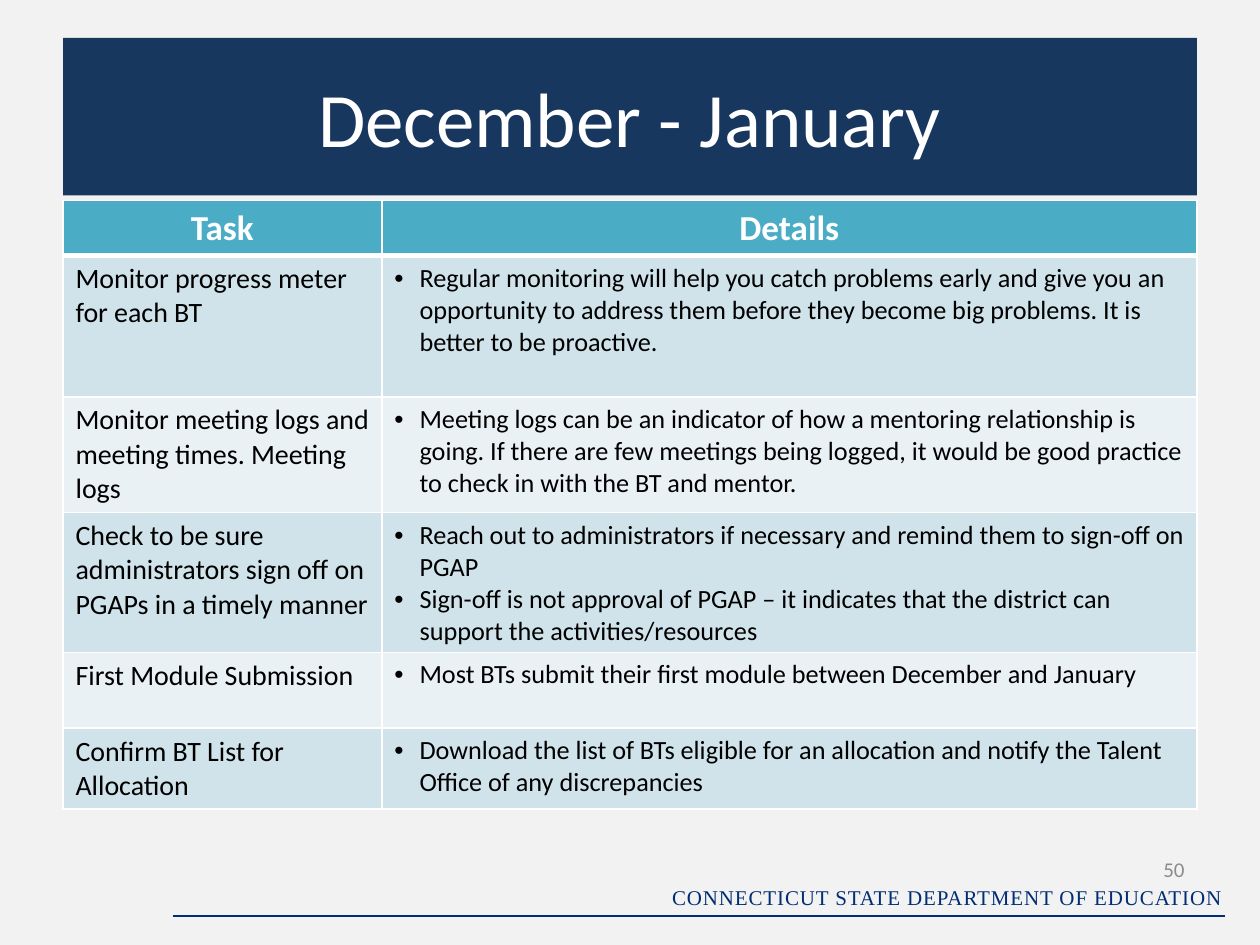
from lxml import etree
from pptx import Presentation
from pptx.dml.color import RGBColor
from pptx.enum.shapes import MSO_CONNECTOR
from pptx.enum.text import MSO_ANCHOR, PP_ALIGN
from pptx.oxml.ns import qn
from pptx.util import Inches, Pt

STRAIGHT = MSO_CONNECTOR.STRAIGHT
MIDDLE = MSO_ANCHOR.MIDDLE
LEFT, CENTER, RIGHT = PP_ALIGN.LEFT, PP_ALIGN.CENTER, PP_ALIGN.RIGHT

BACKGROUND = RGBColor(0xF2, 0xF2, 0xF2)
NAVY = RGBColor(0x17, 0x37, 0x5E)
FOOTER_BLUE = RGBColor(0x00, 0x2D, 0x73)
GRAY = RGBColor(0x8C, 0x8C, 0x8C)
WHITE = RGBColor(0xFF, 0xFF, 0xFF)
BLACK = RGBColor(0x00, 0x00, 0x00)
TEAL = RGBColor(0x4B, 0xAC, 0xC6)
BANDS = (RGBColor(0xD0, 0xE3, 0xEA), RGBColor(0xE9, 0xF1, 0xF5))

MARGIN = Inches(0.5)
COLUMN_WIDTHS = (2.53, 6.47)
ROW_HEIGHTS = (0.44, 1.12, 0.92, 1.11, 0.6, 0.64)
TASKS = (
    ("Monitor progress meter for each BT",
     ["Regular monitoring will help you catch problems early and give you an "
      "opportunity to address them before they become big problems. It is better to be proactive."]),
    ("Monitor meeting logs and meeting times. Meeting logs",
     ["Meeting logs can be an indicator of how a mentoring relationship is going. If there are few "
      "meetings being logged, it would be good practice to check in with the BT and mentor."]),
    ("Check to be sure administrators sign off on PGAPs in a timely manner",
     ["Reach out to administrators if necessary and remind them to sign-off on PGAP",
      "Sign-off is not approval of PGAP – it indicates that the district can support "
      "the activities/resources"]),
    ("First Module Submission",
     ["Most BTs submit their first module between December and January"]),
    ("Confirm BT List for Allocation",
     ["Download the list of BTs eligible for an allocation and notify the Talent Office "
      "of any discrepancies"]),
)


def format_paragraph(paragraph, size, color, alignment=LEFT, bold=False, name="Calibri"):
    paragraph.alignment = alignment
    paragraph.font.name = name
    paragraph.font.size = Pt(size)
    paragraph.font.bold = bold
    paragraph.font.color.rgb = color


def style_cell(cell, color, bottom_width):
    properties = cell._tc.get_or_add_tcPr()
    for side, width in (("L", 1), ("R", 1), ("T", 1), ("B", bottom_width)):
        border = etree.SubElement(properties, qn(f"a:ln{side}"), w=str(Pt(width)))
        fill = etree.SubElement(border, qn("a:solidFill"))
        etree.SubElement(fill, qn("a:srgbClr"), val=str(WHITE))
    cell.fill.solid()
    cell.fill.fore_color.rgb = color


presentation = Presentation()
presentation.slide_width = Inches(10)
presentation.slide_height = Inches(7.5)
slide = presentation.slides.add_slide(presentation.slide_layouts[5])
slide.background.fill.solid()
slide.background.fill.fore_color.rgb = BACKGROUND
content_width = presentation.slide_width - 2 * MARGIN

rule = slide.shapes.add_connector(STRAIGHT, Inches(1.37), Inches(7.27), Inches(9.72), Inches(7.27))
rule.line.color.rgb = FOOTER_BLUE
rule.line.width = Pt(0.75)
etree.SubElement(rule._element.spPr, qn("a:effectLst"))

footer = slide.shapes.add_textbox(Inches(5.18), Inches(6.97), Inches(4.62), Inches(0.3))
footer.text_frame.word_wrap = True
footer.text_frame.text = "CONNECTICUT STATE DEPARTMENT OF EDUCATION"
footer_paragraph = footer.text_frame.paragraphs[0]
format_paragraph(footer_paragraph, 12, FOOTER_BLUE, RIGHT, name="Times New Roman")
footer_paragraph.runs[0]._r.get_or_add_rPr().set("spc", "50")

title = slide.shapes.title
title.left, title.top = MARGIN, Inches(0.3)
title.width, title.height = content_width, Inches(1.25)
title.fill.solid()
title.fill.fore_color.rgb = NAVY
title.text_frame.text = "December - January"
title.text_frame.vertical_anchor = MIDDLE
format_paragraph(title.text_frame.paragraphs[0], 44, WHITE, CENTER)

number = slide.shapes.add_textbox(Inches(8.97), Inches(6.7), Inches(0.53), Inches(0.4))
number.text_frame.word_wrap = True
number.text_frame.vertical_anchor = MIDDLE
number.text_frame.text = "50"
format_paragraph(number.text_frame.paragraphs[0], 12, GRAY, RIGHT)

table = slide.shapes.add_table(len(ROW_HEIGHTS), len(COLUMN_WIDTHS), MARGIN, Inches(1.59),
                               content_width, Inches(sum(ROW_HEIGHTS))).table
for column, width in zip(table.columns, COLUMN_WIDTHS):
    column.width = Inches(width)
for row, height in zip(table.rows, ROW_HEIGHTS):
    row.height = Inches(height)

for cell, heading in zip(table.rows[0].cells, ("Task", "Details")):
    style_cell(cell, TEAL, 3)
    cell.text = heading
    format_paragraph(cell.text_frame.paragraphs[0], 20, WHITE, CENTER, bold=True)

for index, (task, details) in enumerate(TASKS):
    task_cell, details_cell = table.rows[index + 1].cells
    for cell in (task_cell, details_cell):
        style_cell(cell, BANDS[index % 2], 1)
    task_cell.text = task
    format_paragraph(task_cell.text_frame.paragraphs[0], 16, BLACK)
    details_cell.text = "\n".join(details)
    for paragraph in details_cell.text_frame.paragraphs:
        format_paragraph(paragraph, 15, BLACK)
        properties = paragraph._p.get_or_add_pPr()
        properties.set("marL", str(Inches(0.2)))
        properties.set("indent", str(Inches(-0.2)))
        bullet_font = etree.Element(qn("a:buFont"), typeface="Arial")
        bullet = etree.Element(qn("a:buChar"), char="•")
        properties.insert(0, bullet_font)
        properties.insert(1, bullet)

presentation.save("out.pptx")
